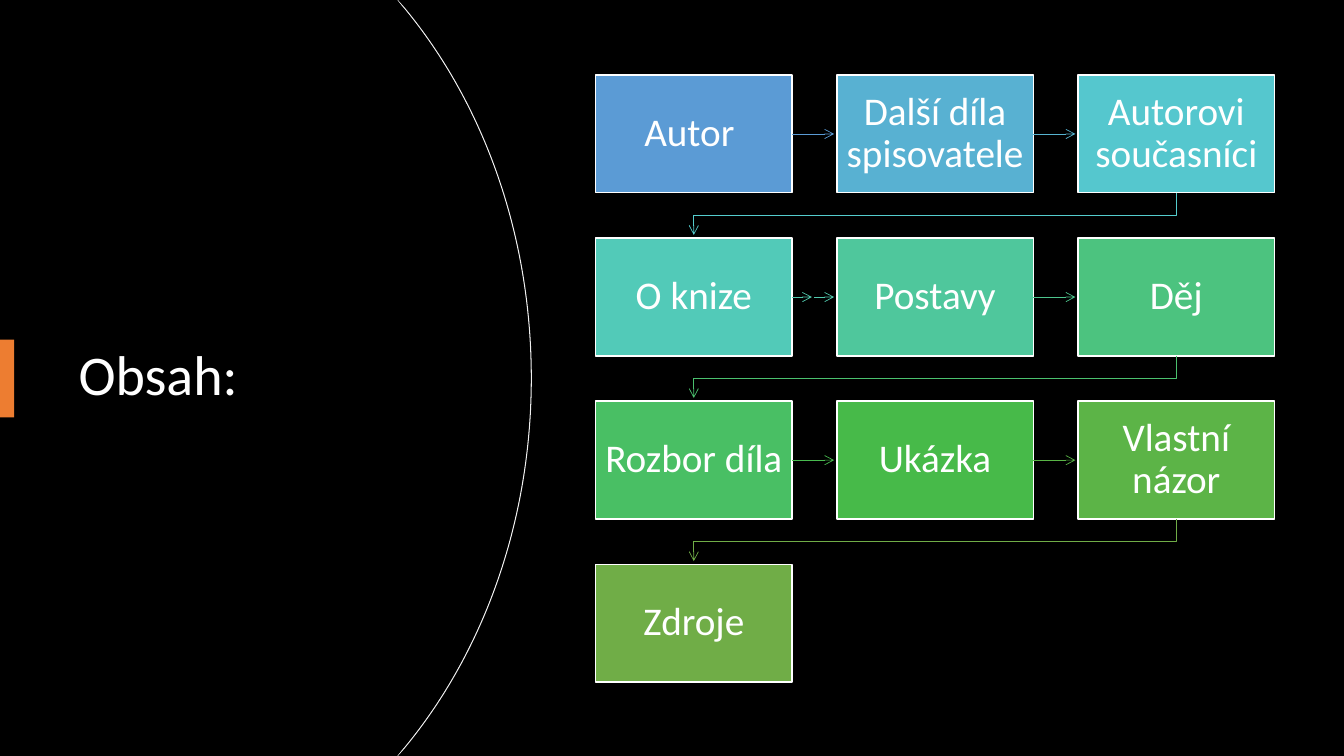
from lxml.etree import SubElement
from pptx import Presentation
from pptx.dml.color import RGBColor
from pptx.enum.shapes import MSO_CONNECTOR, MSO_SHAPE
from pptx.enum.text import MSO_ANCHOR, PP_ALIGN
from pptx.oxml.ns import qn
from pptx.util import Cm, Pt


def paint(fill, colour):
    fill.solid()
    fill.fore_color.rgb = RGBColor.from_string(colour)


def style_arrow(arrow, colour):
    arrow.line.width = Pt(0.5)
    paint(arrow.line.fill, colour)
    properties = arrow._element.spPr
    SubElement(properties.find(qn("a:ln")), qn("a:tailEnd"), type="arrow")
    if properties.find(qn("a:effectLst")) is None:
        SubElement(properties, qn("a:effectLst"))


deck = Presentation()
deck.slide_width, deck.slide_height = Cm(33.87), Cm(19.05)
slide = deck.slides.add_slide(deck.slide_layouts[6])
paint(slide.background.fill, "000000")
shapes = slide.shapes

arc = [(10.19, 0.2), (12.17, 2.59), (13.39, 5.89), (13.39, 9.53),
       (13.39, 13.16), (12.17, 16.46), (10.19, 18.85)]

for inset, outline in [(0, "EFEFEF"), (0.03, None)]:
    edge = [(10.01, 0), *[(x - inset, y) for x, y in arc], (10.01, 19.05), (0, 19.05)]
    builder = shapes.build_freeform(0, 0)
    builder.add_line_segments([(Cm(x), Cm(y)) for x, y in edge], close=True)
    panel = builder.convert_to_shape()
    segments = list(panel._element.iter(qn("a:lnTo")))
    for first in (2, 5):
        bend = segments[first]
        bend.tag = qn("a:cubicBezTo")
        for follower in segments[first + 1:first + 3]:
            bend.append(follower[0])
            follower.getparent().remove(follower)
    panel.shadow.inherit = False
    paint(panel.fill, "000000")
    if outline:
        paint(panel.line.fill, outline)
        panel.line.width = Pt(0.75)
    else:
        panel.line.fill.background()

title = shapes.add_textbox(Cm(1.73), Cm(3.23), Cm(10.01), Cm(12.57))
title.text_frame.word_wrap = True
title.text_frame.vertical_anchor = MSO_ANCHOR.MIDDLE
heading = title.text_frame.paragraphs[0]
heading.line_spacing = 0.9
heading_run = heading.add_run()
heading_run.text = "Obsah:"
heading_run.font.name = "Calibri"
heading_run.font.size = Pt(40)
paint(heading_run.font.fill, "FFFFFF")

accent = shapes.add_shape(MSO_SHAPE.RECTANGLE, 0, Cm(8.56), Cm(0.36), Cm(1.96))
accent.shadow.inherit = False
paint(accent.fill, "ED7D31")
accent.line.fill.background()

topics = [
    ("Autor ", "5B9BD5", "5B9BD5"),
    ("Další díla spisovatele", "58B1D2", "57B4D1"),
    ("Autorovi současníci", "55C7CE", "54CCCD"),
    ("O knize", "52CAB8", "51C9AD"),
    ("Postavy", "4FC79C", "4DC58D"),
    ("Děj", "4CC37F", "4AC06E"),
    ("Rozbor díla", "49BF64", "48BB4F"),
    ("Ukázka", "47BA49", "59B546"),
    ("Vlastní názor", "5CB447", "70AD47"),
    ("Zdroje", "70AD47", None),
]
columns = 3
first_left, first_top = 15.01, 1.89
box_width, box_height = 4.95, 2.97
column_step, row_step = 6.08, 4.11
arrow_length = 1.06

for index, (topic, box_colour, arrow_colour) in enumerate(topics):
    row, column = divmod(index, columns)
    left = first_left + column * column_step
    top = first_top + row * row_step
    box = shapes.add_shape(MSO_SHAPE.RECTANGLE, Cm(left), Cm(top), Cm(box_width), Cm(box_height))
    box.shadow.inherit = False
    paint(box.fill, box_colour)
    paint(box.line.fill, "FFFFFF")
    box.line.width = Pt(1)
    frame = box.text_frame
    frame.word_wrap = True
    frame.vertical_anchor = MSO_ANCHOR.MIDDLE
    frame.margin_left = frame.margin_right = frame.margin_top = frame.margin_bottom = Cm(0.23)
    label = frame.paragraphs[0]
    label.alignment = PP_ALIGN.CENTER
    label.line_spacing = 0.9
    run = label.add_run()
    run.text = topic
    run.font.name = "Calibri"
    run.font.size = Pt(28)
    paint(run.font.fill, "FFFFFF")

    if arrow_colour is None:
        continue
    if column == columns - 1:
        start_x, start_y = left + box_width / 2, top + box_height
        end_x = first_left + box_width / 2
        turn_y = start_y + 0.57
        builder = shapes.build_freeform(Cm(start_x), Cm(start_y))
        corners = [(start_x, turn_y), (end_x, turn_y), (end_x, start_y + arrow_length)]
        builder.add_line_segments([(Cm(x), Cm(y)) for x, y in corners], close=False)
        row_return = builder.convert_to_shape()
        row_return.fill.background()
        row_return.shadow.inherit = False
        style_arrow(row_return, arrow_colour)
        continue

    right, middle = left + box_width, top + box_height / 2
    spans = [(0, 0.5), (0.56, arrow_length)] if topic == "O knize" else [(0, arrow_length)]
    for start, end in spans:
        arrow = shapes.add_connector(
            MSO_CONNECTOR.STRAIGHT, Cm(right + start), Cm(middle), Cm(right + end), Cm(middle)
        )
        if start == 0:
            arrow.begin_connect(box, 3)
        style_arrow(arrow, arrow_colour)

deck.save("out.pptx")
